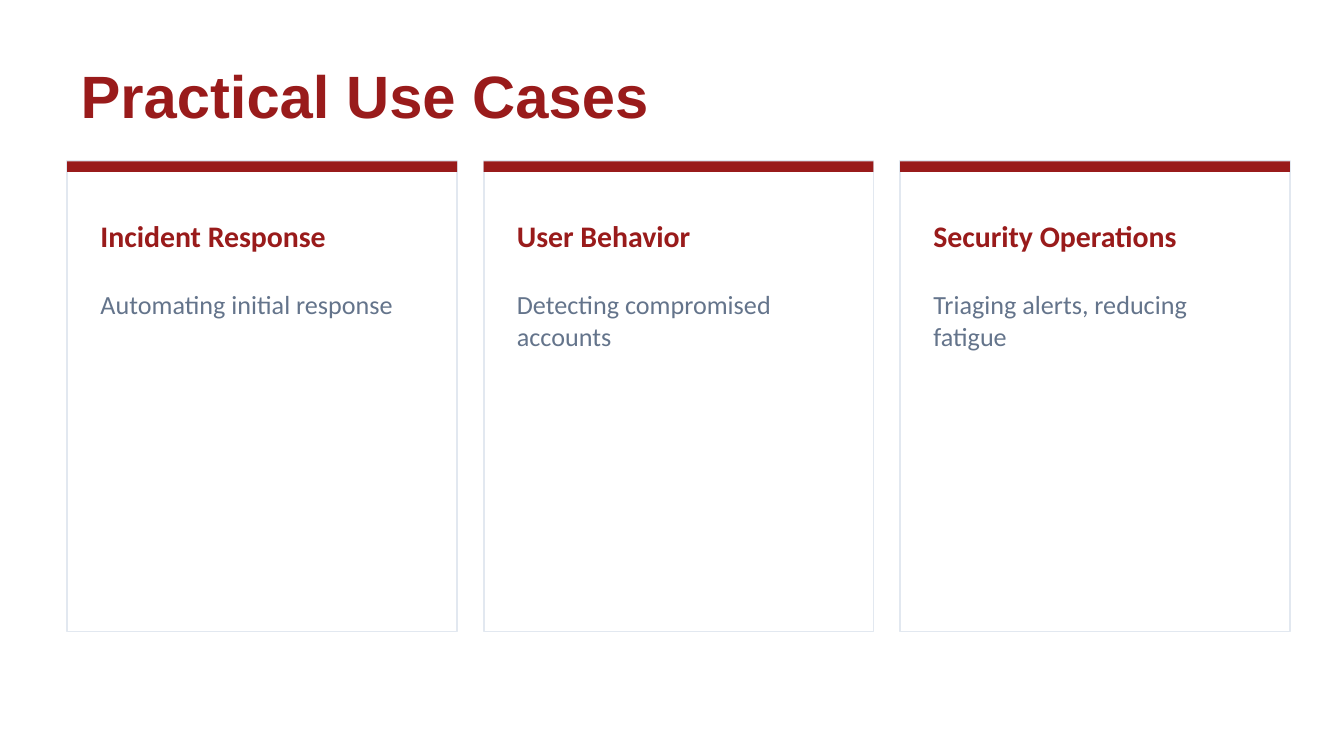
from pptx import Presentation
from pptx.dml.color import RGBColor
from pptx.enum.shapes import MSO_SHAPE
from pptx.enum.text import MSO_ANCHOR, MSO_AUTO_SIZE, PP_ALIGN
from pptx.util import Cm, Pt

RECTANGLE = MSO_SHAPE.RECTANGLE
TOP, MIDDLE = MSO_ANCHOR.TOP, MSO_ANCHOR.MIDDLE
NO_AUTOFIT = MSO_AUTO_SIZE.NONE
LEFT = PP_ALIGN.LEFT

COLORS = {"accent": "991B1B", "border": "E2E8F0", "body": "64748B", "white": "FFFFFF"}
TITLE_ONLY_LAYOUT = 5

# Card grid, in centimetres
CARD_LEFT, CARD_TOP = 1.27, 3.05
CARD_WIDTH, CARD_HEIGHT = 7.37, 8.89
CARD_PITCH = 7.87
BAR_HEIGHT = 0.2
TEXT_INSET, TEXT_WIDTH = 0.38, 6.6

USE_CASES = [
    ("Incident Response", "Automating initial response"),
    ("User Behavior", "Detecting compromised accounts"),
    ("Security Operations", "Triaging alerts, reducing fatigue"),
]


class SlideBuilder:
    """Holds the style and the current slide."""

    title_font = "Arial"
    card_font = "Calibri"

    def __init__(self, slide):
        self.slide = slide

    def color(self, name):
        return RGBColor.from_string(COLORS[name])

    def fill_text(self, box, text, font, size, color, bold=False, anchor=TOP):
        frame = box.text_frame
        frame.word_wrap = True
        frame.auto_size = NO_AUTOFIT
        frame.vertical_anchor = anchor
        para = frame.paragraphs[0]
        para.alignment = LEFT
        span = para.add_run()
        span.text = text
        span.font.name = font
        span.font.size = Pt(size)
        span.font.bold = bold
        span.font.color.rgb = self.color(color)

    def title(self, text, left, top, width, height):
        box = self.slide.shapes.title
        box.left, box.top = Cm(left), Cm(top)
        box.width, box.height = Cm(width), Cm(height)
        self.fill_text(box, text, self.title_font, 32, "accent", True, MIDDLE)

    def rectangle(self, left, top, width, height, fill, line=None):
        box = self.slide.shapes.add_shape(
            RECTANGLE, Cm(left), Cm(top), Cm(width), Cm(height))
        box.shadow.inherit = False
        box.fill.solid()
        box.fill.fore_color.rgb = self.color(fill)
        if line:
            box.line.color.rgb = self.color(line)
            box.line.width = Pt(1)
        else:
            box.line.fill.background()

    def text(self, text, left, top, width, height, size, color, **style):
        box = self.slide.shapes.add_textbox(
            Cm(left), Cm(top), Cm(width), Cm(height))
        self.fill_text(box, text, self.card_font, size, color, **style)

    def card(self, left, heading, description):
        self.rectangle(left, CARD_TOP, CARD_WIDTH, CARD_HEIGHT, "white", "border")
        self.rectangle(left, CARD_TOP, CARD_WIDTH, BAR_HEIGHT, "accent")
        text_left = left + TEXT_INSET
        self.text(heading, text_left, 3.81, TEXT_WIDTH, 1.27, 16, "accent",
                  bold=True, anchor=MIDDLE)
        self.text(description, text_left, 5.33, TEXT_WIDTH, 6.1, 14, "body")


def main():
    deck = Presentation()
    deck.slide_width, deck.slide_height = Cm(25.4), Cm(14.29)
    page = deck.slides.add_slide(deck.slide_layouts[TITLE_ONLY_LAYOUT])
    builder = SlideBuilder(page)

    # Title
    builder.title("Practical Use Cases", 1.27, 1.02, 22.86, 1.52)

    # One card per use case
    for index, (heading, description) in enumerate(USE_CASES):
        builder.card(CARD_LEFT + index * CARD_PITCH, heading, description)

    deck.save("out.pptx")


if __name__ == "__main__":
    main()
